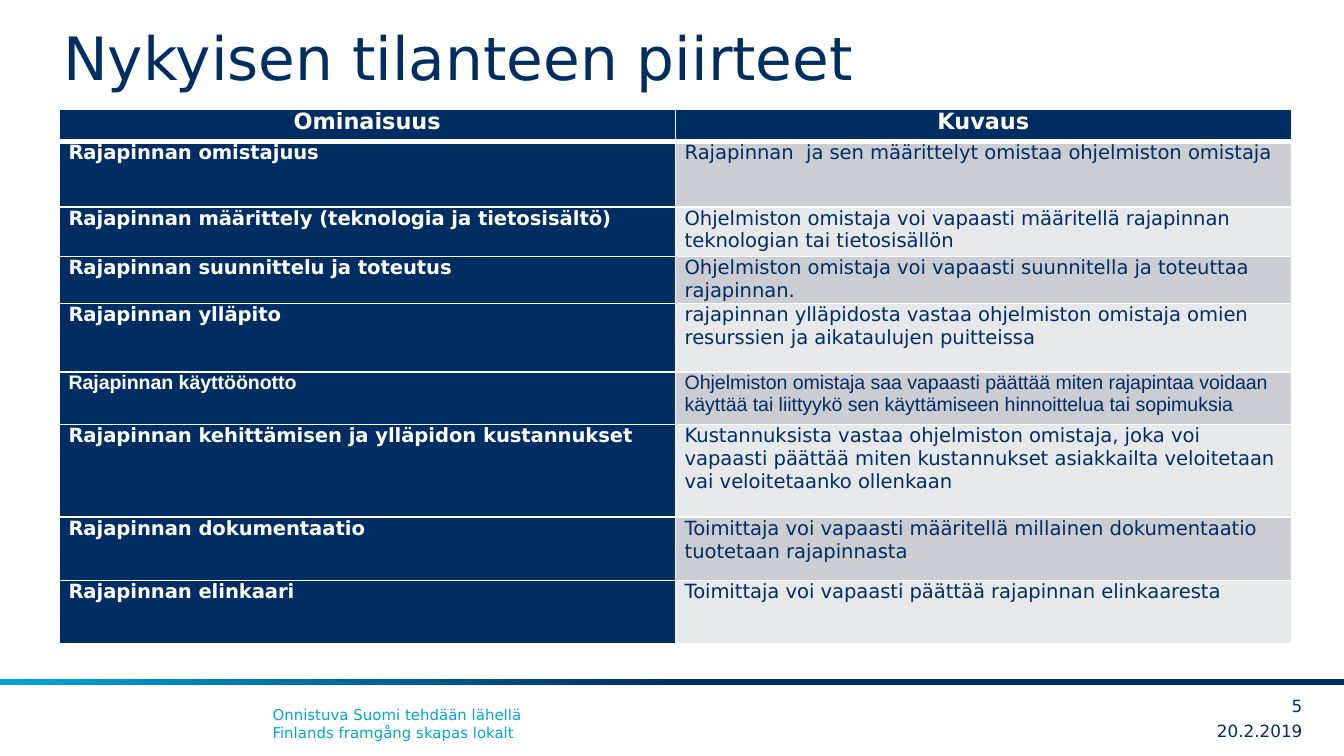
"""Build the slide that lists the features of the current situation."""

from dataclasses import dataclass

from lxml.etree import SubElement
from pptx import Presentation
from pptx.dml.color import RGBColor
from pptx.enum.shapes import MSO_SHAPE
from pptx.enum.text import MSO_ANCHOR, MSO_AUTO_SIZE, PP_ALIGN
from pptx.oxml.ns import qn
from pptx.util import Inches, Pt


@dataclass(frozen=True)
class Theme:
    font: str = "DejaVu Sans"
    alternate_font: str = "Arial"
    navy: str = "002E63"
    cyan: str = "00A6D6"
    white: str = "FFFFFF"
    bands: tuple = ("CCCDD3", "E7E8EA")
    title_size: float = 32
    header_size: float = 12
    body_size: float = 10.5
    small_size: float = 9
    footer_size: float = 8


THEME = Theme()
TITLE = "Nykyisen tilanteen piirteet"
HEADER = ("Ominaisuus", "Kuvaus")
HEADER_HEIGHT = 0.24
ALTERNATE_FEATURE = "Rajapinnan käyttöönotto"
FEATURES = [
    (0.49, "Rajapinnan omistajuus",
     "Rajapinnan  ja sen määrittelyt omistaa ohjelmiston omistaja"),
    (0.37, "Rajapinnan määrittely (teknologia ja tietosisältö)",
     "Ohjelmiston omistaja voi vapaasti määritellä rajapinnan teknologian tai tietosisällön"),
    (0.33, "Rajapinnan suunnittelu ja toteutus",
     "Ohjelmiston omistaja voi vapaasti suunnitella ja toteuttaa rajapinnan."),
    (0.51, "Rajapinnan ylläpito",
     "rajapinnan ylläpidosta vastaa ohjelmiston omistaja omien resurssien ja aikataulujen puitteissa"),
    (0.39, ALTERNATE_FEATURE,
     "Ohjelmiston omistaja saa vapaasti päättää miten rajapintaa voidaan käyttää "
     "tai liittyykö sen käyttämiseen hinnoittelua tai sopimuksia"),
    (0.69, "Rajapinnan kehittämisen ja ylläpidon kustannukset",
     "Kustannuksista vastaa ohjelmiston omistaja, joka voi vapaasti päättää miten "
     "kustannukset asiakkailta veloitetaan vai veloitetaanko ollenkaan"),
    (0.47, "Rajapinnan dokumentaatio",
     "Toimittaja voi vapaasti määritellä millainen dokumentaatio tuotetaan rajapinnasta"),
    (0.47, "Rajapinnan elinkaari",
     "Toimittaja voi vapaasti päättää rajapinnan elinkaaresta"),
]
FOOTER = "Onnistuva Suomi tehdään lähellä\vFinlands framgång skapas lokalt"
CORNER_NOTES = [("20.2.2019", (8.7, 5.33, 0.99, 0.22)), ("5", (9.26, 5.14, 0.43, 0.22))]


def style_text(frame, size, color, font=THEME.font, bold=False, align=PP_ALIGN.LEFT):
    for paragraph in frame.paragraphs:
        paragraph.alignment = align
        for span in paragraph.runs:
            span.font.name = font
            span.font.size = Pt(size)
            span.font.bold = bold
            span.font.color.rgb = RGBColor.from_string(color)


def set_margins(target, horizontal, vertical):
    target.margin_left = target.margin_right = Inches(horizontal)
    target.margin_top = target.margin_bottom = Inches(vertical)


def add_text(page, text, place, size, color, align=PP_ALIGN.LEFT):
    frame = page.shapes.add_textbox(*map(Inches, place)).text_frame
    frame.word_wrap = True
    frame.text = text
    style_text(frame, size, color, align=align)
    return frame


def add_title(page):
    title = page.shapes.title
    title.left, title.top, title.width, title.height = map(Inches, (0.47, 0, 8.7, 0.74))
    frame = title.text_frame
    frame.text = TITLE
    frame.auto_size = MSO_AUTO_SIZE.NONE
    frame.vertical_anchor = MSO_ANCHOR.BOTTOM
    set_margins(frame, 0, 0.05)
    style_text(frame, THEME.title_size, THEME.navy)


def set_borders(cell, top, bottom):
    properties = cell._tc.get_or_add_tcPr()
    for side, width in (("L", 1), ("R", 1), ("T", top), ("B", bottom)):
        line = SubElement(properties, qn(f"a:ln{side}"), w=str(Pt(width)))
        fill = SubElement(line, qn("a:solidFill"))
        SubElement(fill, qn("a:srgbClr"), val=THEME.white)


def fill_cell(cell, text, fill, top=1, bottom=1, **style):
    cell.text = text
    set_margins(cell, 0.07, 0)
    set_borders(cell, top, bottom)
    cell.fill.solid()
    cell.fill.fore_color.rgb = RGBColor.from_string(fill)
    style_text(cell.text_frame, **style)


def add_feature_table(page):
    heights = [HEADER_HEIGHT] + [height for height, _, _ in FEATURES]
    place = map(Inches, (0.44, 0.81, 9.17, sum(heights)))
    table = page.shapes.add_table(len(heights), len(HEADER), *place).table
    for row, height in zip(table.rows, heights):
        row.height = Inches(height)
    for column, label in enumerate(HEADER):
        fill_cell(table.cell(0, column), label, THEME.navy, bottom=3,
                  size=THEME.header_size, color=THEME.white, bold=True,
                  align=PP_ALIGN.CENTER)
    for index, (_, feature, description) in enumerate(FEATURES):
        font = THEME.alternate_font if feature == ALTERNATE_FEATURE else THEME.font
        shared = dict(top=1 if index else 3, size=THEME.body_size, font=font)
        fill_cell(table.cell(index + 1, 0), feature, THEME.navy,
                  color=THEME.white, bold=True, **shared)
        fill_cell(table.cell(index + 1, 1), description, THEME.bands[index % 2],
                  color=THEME.navy, **shared)


def add_footer(page):
    band = page.shapes.add_shape(MSO_SHAPE.RECTANGLE, *map(Inches, (0, 5.05, 10, 0.05)))
    band.shadow.inherit = False
    band.line.fill.background()
    band.fill.gradient()
    band.fill.gradient_angle = 180
    stops = ((0.5, THEME.navy), (1, THEME.cyan))
    for stop, (position, color) in zip(band.fill.gradient_stops, stops):
        stop.position = position
        stop.color.rgb = RGBColor.from_string(color)
    add_text(page, FOOTER, (1.93, 5.2, 6.54, 0.37), THEME.footer_size, THEME.cyan)
    for text, place in CORNER_NOTES:
        frame = add_text(page, text, place, THEME.small_size, THEME.navy, PP_ALIGN.RIGHT)
        frame.vertical_anchor = MSO_ANCHOR.MIDDLE
        set_margins(frame, 0, 0)


def main():
    deck = Presentation()
    deck.slide_width = Inches(10)
    deck.slide_height = deck.slide_width * 9 // 16
    page = deck.slides.add_slide(deck.slide_layouts[5])
    add_footer(page)
    add_title(page)
    add_feature_table(page)
    deck.save("out.pptx")


if __name__ == "__main__":
    main()
